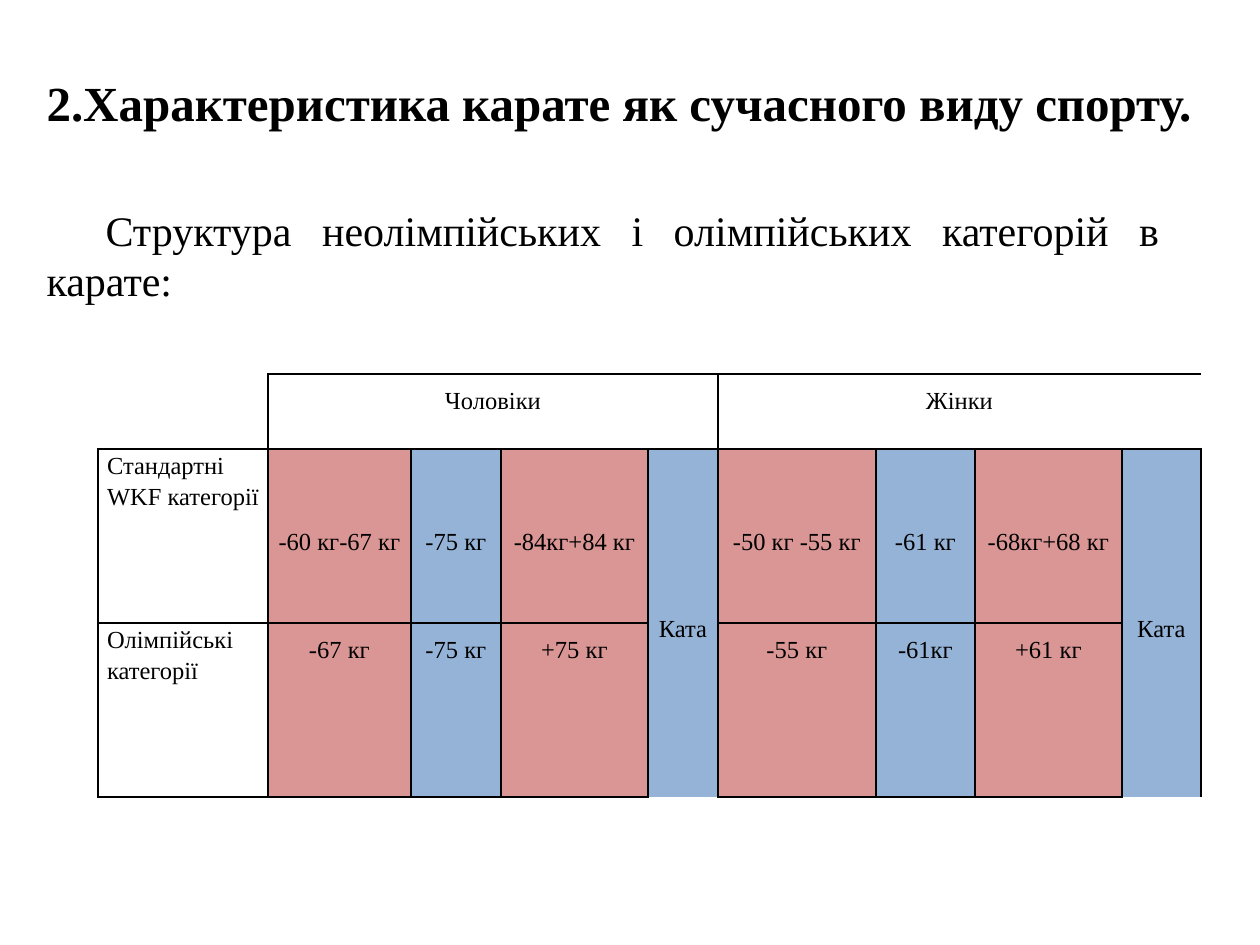
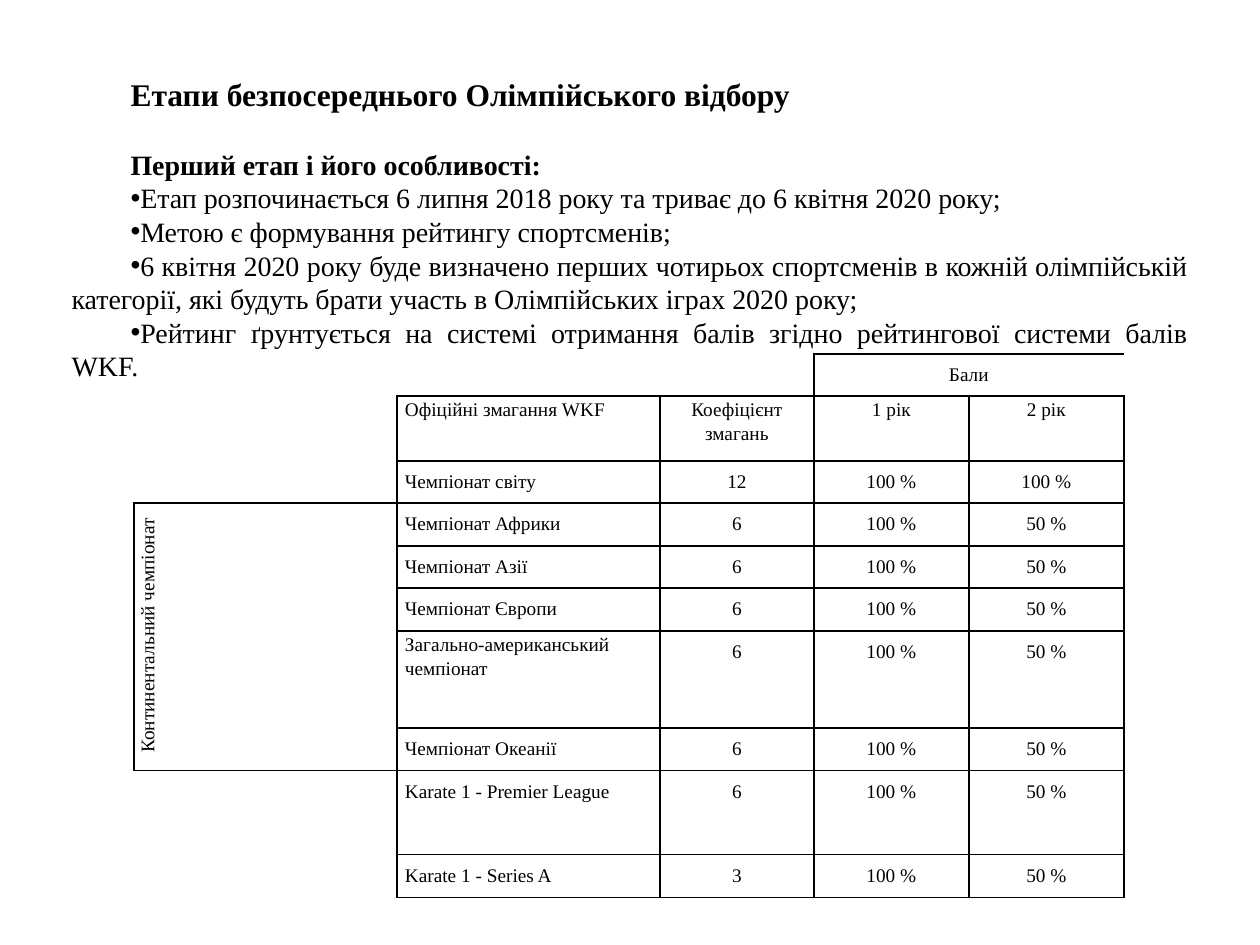
from lxml.etree import SubElement
from pptx import Presentation
from pptx.dml.color import RGBColor
from pptx.enum.text import MSO_ANCHOR, MSO_AUTO_SIZE, PP_ALIGN
from pptx.oxml.ns import qn
from pptx.util import Pt

PX = 914400 / 126
FONT = "Times New Roman"
COLORS = {"ink": "000000", "red": "D99694", "blue": "95B3D7"}
INDENT = 59
LEFT, ABOVE = "<", "^"

CATEGORIES = {
    "title": {"text": "2.Характеристика карате як сучасного виду спорту.",
              "box": (34, 66, 1240, 72), "size": 28, "indent": 0},
    "body": {"box": (34, 198, 1138, 106), "size": 24, "items": [
        ("Структура неолімпійських і олімпійських категорій в карате:", "plain"),
    ]},
    "table": {
        "origin": (98, 374), "size": 14, "margin": 9,
        "columns": [170, 143, 90, 147, 70, 158, 99, 147, 79],
        "rows": [75, 174, 174],
        "label_columns": 1,
        "tight": {"Стандартні WKF категорії", "Олімпійські категорії"},
        "middle_row": 1,
        "stripes": ("blue", "red"),
        "cells": [
            ["", "Чоловіки", LEFT, LEFT, LEFT, "Жінки", LEFT, LEFT, LEFT],
            ["Стандартні WKF категорії", "-60 кг-67 кг", "-75 кг", "-84кг+84 кг", "Ката",
             "-50 кг -55 кг", "-61 кг", "-68кг+68 кг", "Ката"],
            ["Олімпійські категорії", "-67 кг", "-75 кг", "+75 кг", ABOVE,
             "-55 кг", "-61кг", "+61 кг", ABOVE],
        ],
    },
}

SELECTION = {
    "title": {"text": "Етапи безпосереднього Олімпійського відбору",
              "box": (59, 69, 1142, 50), "size": 18, "indent": INDENT},
    "body": {"box": (59, 141, 1142, 331), "size": 16, "items": [
        ("Перший етап і його особливості:", "heading"),
        ("Етап розпочинається 6 липня 2018 року та триває до 6 квітня 2020 року;", "bullet"),
        ("Метою є формування рейтингу спортсменів;", "bullet"),
        ("6 квітня 2020 року буде визначено перших чотирьох спортсменів в кожній олімпійській "
         "категорії, які будуть брати участь в Олімпійських іграх 2020 року;", "bullet"),
        ("Рейтинг ґрунтується на системі отримання балів згідно рейтингової системи балів WKF.",
         "bullet"),
    ]},
    "table": {
        "origin": (134, 354), "size": 11, "margin": 8,
        "columns": [263, 263, 154, 155, 155],
        "rows": [42, 65, 42, 43, 42, 43, 97, 43, 84, 43],
        "label_columns": 2,
        "tight": {"Офіційні змагання WKF", "Коефіцієнт змагань", "1 рік", "2 рік",
                  "Континентальний чемпіонат", "Загально-американський чемпіонат"},
        "vertical": "Континентальний чемпіонат",
        "cells": [
            ["", "", "", "Бали", LEFT],
            ["", "Офіційні змагання WKF", "Коефіцієнт змагань", "1 рік", "2 рік"],
            ["", "Чемпіонат світу", "12", "100 %", "100 %"],
            ["Континентальний чемпіонат", "Чемпіонат Африки", "6", "100 %", "50 %"],
            [ABOVE, "Чемпіонат Азії", "6", "100 %", "50 %"],
            [ABOVE, "Чемпіонат Європи", "6", "100 %", "50 %"],
            [ABOVE, "Загально-американський чемпіонат", "6", "100 %", "50 %"],
            [ABOVE, "Чемпіонат Океанії", "6", "100 %", "50 %"],
            ["", "Karate 1 - Premier League", "6", "100 %", "50 %"],
            ["", "Karate 1 - Series A", "3", "100 %", "50 %"],
        ],
    },
}


def px(length):
    return round(length * PX)


def add_span(para, text, size, bold=False):
    span = para.add_run()
    span.text = text
    span.font.name = FONT
    span.font.size = Pt(size)
    span.font.bold = bold
    span.font.color.rgb = RGBColor.from_string(COLORS["ink"])


def place(shape, box):
    shape.left, shape.top, shape.width, shape.height = map(px, box)
    frame = shape.text_frame
    frame.word_wrap = True
    frame.auto_size = MSO_AUTO_SIZE.NONE
    frame.vertical_anchor = MSO_ANCHOR.TOP
    return frame


def indent_first_line(para, indent, left=0):
    properties = para._p.get_or_add_pPr()
    properties.set("marL", str(px(left)))
    properties.set("indent", str(px(indent)))
    return properties


def fill_title(page, title):
    para = place(page.shapes.title, title["box"]).paragraphs[0]
    para.alignment = PP_ALIGN.LEFT
    indent_first_line(para, title["indent"])
    add_span(para, title["text"], title["size"], bold=True)


def fill_body(page, body):
    frame = place(page.placeholders[1], body["box"])
    for index, (text, kind) in enumerate(body["items"]):
        para = frame.add_paragraph() if index else frame.paragraphs[0]
        para.alignment = PP_ALIGN.JUSTIFY
        para.space_before = Pt(0)
        properties = indent_first_line(para, INDENT)
        if kind == "bullet":
            SubElement(properties, qn("a:buChar"), char="•")
        else:
            SubElement(properties, qn("a:buNone"))
        add_span(para, text, body["size"], bold=kind == "heading")


def find_owners(cells):
    """Map each grid place to the top left place of its merged cell, or None if empty."""
    owners = {}
    for row, texts in enumerate(cells):
        for column, text in enumerate(texts):
            if text == LEFT:
                owners[row, column] = owners[row, column - 1]
            elif text == ABOVE:
                owners[row, column] = owners[row - 1, column]
            else:
                owners[row, column] = (row, column) if text else None
    return owners


def draw_borders(cell, row, column, owners):
    properties = cell._tc.get_or_add_tcPr()
    neighbours = {"lnL": (row, column - 1), "lnR": (row, column + 1),
                  "lnT": (row - 1, column), "lnB": (row + 1, column)}
    for position, (side, neighbour) in enumerate(neighbours.items()):
        line = SubElement(properties, qn(f"a:{side}"), w=str(Pt(1)))
        properties.insert(position, line)
        if owners[row, column] != owners.get(neighbour):
            fill = SubElement(line, qn("a:solidFill"))
            SubElement(fill, qn("a:srgbClr"), val=COLORS["ink"])
        else:
            SubElement(line, qn("a:noFill"))


def write_cell(cell, text, row, column, data):
    is_label = column < data["label_columns"]
    if row == data.get("middle_row") and not is_label:
        cell.vertical_anchor = MSO_ANCHOR.MIDDLE
    para = cell.text_frame.paragraphs[0]
    para.alignment = PP_ALIGN.JUSTIFY if is_label else PP_ALIGN.CENTER
    para.line_spacing = 1.15 if text in data["tight"] else 1.5
    if text == data.get("vertical"):
        cell._tc.get_or_add_tcPr().set("vert", "vert270")
        indent_first_line(para, 0, left=10)
    add_span(para, text, data["size"])


def add_grid(page, data):
    cells, columns, rows = data["cells"], data["columns"], data["rows"]
    box = (*data["origin"], sum(columns), sum(rows))
    table = page.shapes.add_table(len(rows), len(columns), *map(px, box)).table
    table.first_row = table.horz_banding = False
    for column, width in zip(table.columns, columns):
        column.width = px(width)
    for row, height in zip(table.rows, rows):
        row.height = px(height)

    owners = find_owners(cells)
    for (row, column), owner in owners.items():
        cell = table.cell(row, column)
        cell.margin_left = cell.margin_right = px(data["margin"])
        cell.margin_top = cell.margin_bottom = 0
        if "stripes" in data and row and column:
            cell.fill.solid()
            stripe = data["stripes"][column % 2]
            cell.fill.fore_color.rgb = RGBColor.from_string(COLORS[stripe])
        else:
            cell.fill.background()
        draw_borders(cell, row, column, owners)
        if owner == (row, column):
            write_cell(cell, cells[row][column], row, column, data)

    for owner in set(owners.values()) - {None}:
        last = max(place for place in owners if owners[place] == owner)
        if last != owner:
            table.cell(*owner).merge(table.cell(*last))


def main():
    deck = Presentation()
    deck.slide_width, deck.slide_height = px(1260), px(945)
    for content in (CATEGORIES, SELECTION):
        page = deck.slides.add_slide(deck.slide_layouts[1])
        fill_title(page, content["title"])
        fill_body(page, content["body"])
        add_grid(page, content["table"])
    deck.save("out.pptx")


if __name__ == "__main__":
    main()
